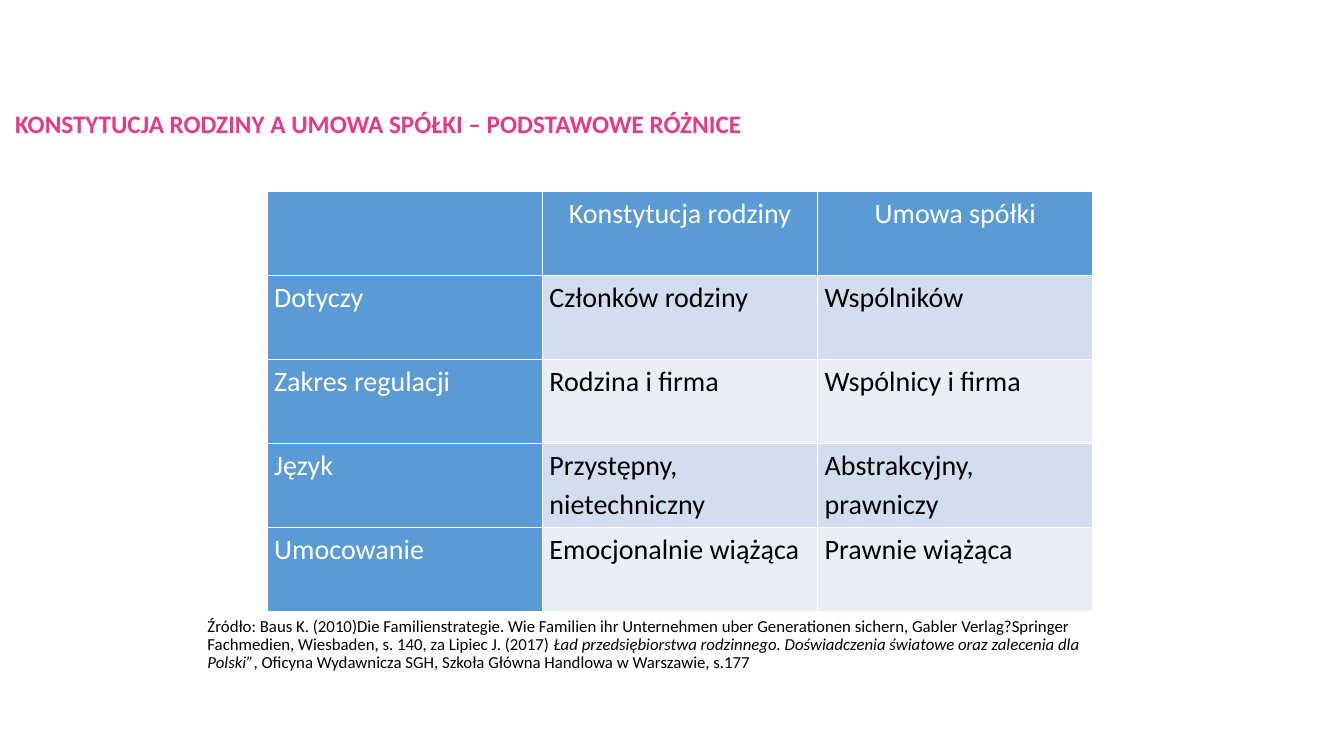
from lxml.etree import SubElement
from pptx import Presentation
from pptx.dml.color import RGBColor as Color
from pptx.enum.text import MSO_ANCHOR as Anchor, PP_ALIGN as Align
from pptx.oxml.ns import qn
from pptx.util import Inches, Pt

COLORS = {
    "title": "E6398C", "header": "5B9BD5", "odd": "D2DEEF", "even": "EAEFF7",
    "white": "FFFFFF", "black": "000000",
}
ROWS = [
    ["", "Konstytucja rodziny", "Umowa spółki"],
    ["Dotyczy", "Członków rodziny", "Wspólników"],
    ["Zakres regulacji", "Rodzina i firma", "Wspólnicy i firma"],
    ["Język", "Przystępny, nietechniczny", "Abstrakcyjny, prawniczy"],
    ["Umocowanie", "Emocjonalnie wiążąca", "Prawnie wiążąca"],
]
SOURCE = [
    ("Źródło: Baus K. (2010)Die Familienstrategie. Wie Familien ihr Unternehmen "
     "uber Generationen sichern, Gabler Verlag?Springer Fachmedien, Wiesbaden, "
     "s. 140, za Lipiec J. (2017) ", False),
    ("Ład przedsiębiorstwa rodzinnego. Doświadczenia światowe oraz zalecenia "
     "dla Polski”", True),
    (", Oficyna Wydawnicza SGH, Szkoła Główna Handlowa w Warszawie, s.177", False),
]


def assign(target, values):
    for name, value in values.items():
        setattr(target, name, value)


class SlideWriter:
    font = "Calibri"

    def __init__(self, page):
        self.page = page

    def span(self, para, text, size, color, **style):
        span = para.add_run()
        span.text = text
        assign(span.font, {"name": self.font, "size": Pt(size), **style})
        span.font.color.rgb = Color.from_string(COLORS[color])

    def text(self, area, spans, size, color, margins, **style):
        box = self.page.shapes.add_textbox(*map(Inches, area))
        frame = box.text_frame
        side, top = map(Inches, margins)
        assign(frame, {
            "word_wrap": True, "vertical_anchor": Anchor.TOP,
            "margin_left": side, "margin_right": side,
            "margin_top": top, "margin_bottom": top,
        })
        para = frame.paragraphs[0]
        para.line_spacing = 0.9
        for text, italic in spans:
            self.span(para, text, size, color, italic=italic, **style)

    def borders(self, cell):
        properties = cell._tc.get_or_add_tcPr()
        for position, side in enumerate(("a:lnL", "a:lnR", "a:lnT", "a:lnB")):
            line = SubElement(properties, qn(side), w=str(Pt(1)))
            fill = SubElement(line, qn("a:solidFill"))
            SubElement(fill, qn("a:srgbClr"), val=COLORS["white"])
            properties.insert(position, line)

    def cell(self, cell, text, fill, color, align):
        cell.fill.solid()
        cell.fill.fore_color.rgb = Color.from_string(COLORS[fill])
        assign(cell, {
            "margin_left": Inches(0.07), "margin_right": Inches(0.07),
            "margin_top": 0, "margin_bottom": 0, "vertical_anchor": Anchor.TOP,
        })
        self.borders(cell)
        if text:
            para = cell.text_frame.paragraphs[0]
            assign(para, {"alignment": align, "line_spacing": 1.15,
                          "space_after": Pt(6)})
            self.span(para, text, 20, color)

    def table(self, area, rows):
        shape = self.page.shapes.add_table(len(rows), len(rows[0]),
                                           *map(Inches, area))
        for r, row in enumerate(rows):
            for c, text in enumerate(row):
                heading = r == 0 or c == 0
                band = "odd" if r % 2 else "even"
                self.cell(
                    shape.table.cell(r, c), text,
                    "header" if heading else band,
                    "white" if heading else "black",
                    Align.JUSTIFY if r else Align.CENTER,
                )


def main():
    deck = Presentation()
    assign(deck, {"slide_width": Inches(13.33), "slide_height": Inches(7.5)})
    writer = SlideWriter(deck.slides.add_slide(deck.slide_layouts[6]))
    writer.table((2.65, 1.9, 8.19, 4.17), ROWS)
    title = "KONSTYTUCJA RODZINY A UMOWA SPÓŁKI – PODSTAWOWE RÓŻNICE"
    writer.text((0.15, 1.11, 9.17, 0.43), [(title, False)], 18, "title",
                (0, 0), bold=True)
    writer.text((1.96, 6.08, 9.17, 0.83), SOURCE, 12, "black", (0.1, 0.05))
    deck.save("out.pptx")


if __name__ == "__main__":
    main()
